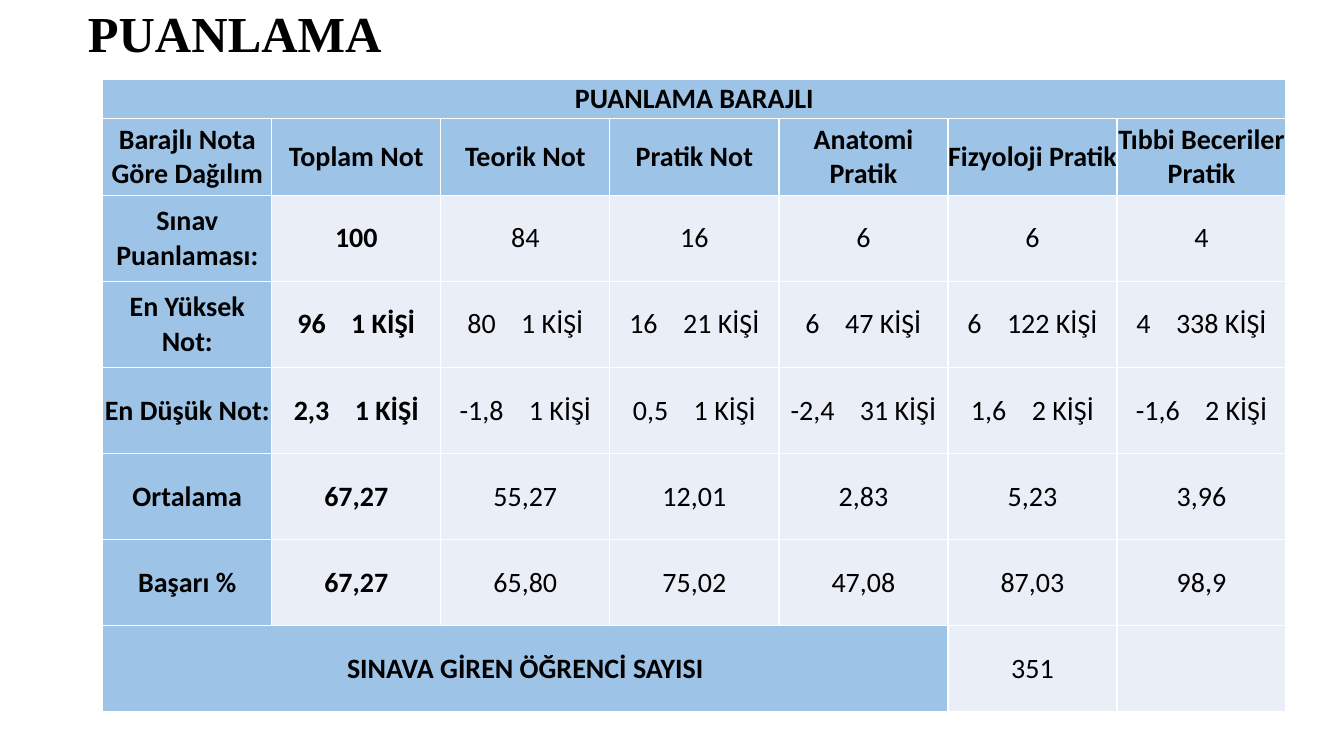
from dataclasses import dataclass

from lxml.etree import SubElement
from pptx import Presentation
from pptx.dml.color import RGBColor as RGB
from pptx.enum.text import MSO_ANCHOR as Anchor, MSO_AUTO_SIZE as AutoSize, PP_ALIGN as Align
from pptx.oxml.ns import qn
from pptx.util import Cm, Pt

# Content: a tuple is a score and the number of people who got it
TITLE = "PUANLAMA"
BANNER = "PUANLAMA BARAJLI"
HEADINGS = ["Barajlı Nota Göre Dağılım", "Toplam Not", "Teorik Not", "Pratik Not",
            "Anatomi Pratik", "Fizyoloji Pratik", "Tıbbi Beceriler Pratik"]
SCORES = [
    ["Sınav Puanlaması:", "100", "84", "16", "6", "6", "4"],
    ["En Yüksek Not:", ("96", "1 KİŞİ"), ("80", "1 KİŞİ"), ("16", "21 KİŞİ"),
     ("6", "47 KİŞİ"), ("6", "122 KİŞİ"), ("4", "338 KİŞİ")],
    ["En Düşük Not:", ("2,3", "1 KİŞİ"), ("-1,8", "1 KİŞİ"), ("0,5", "1 KİŞİ"),
     ("-2,4", "31 KİŞİ"), ("1,6", "2 KİŞİ"), ("-1,6", "2 KİŞİ")],
    ["Ortalama", "67,27", "55,27", "12,01", "2,83", "5,23", "3,96"],
    ["Başarı %", "67,27", "65,80", "75,02", "47,08", "87,03", "98,9"],
]
STUDENTS_LABEL, STUDENTS = "SINAVA GİREN ÖĞRENCİ SAYISI", "351"
STUDENTS_SPAN = 5


@dataclass(frozen=True)
class Theme:
    text: str = "000000"
    header: str = "9DC3E6"
    body: str = "EAEFF7"
    border: str = "FFFFFF"
    title_font: str = "Times New Roman"
    table_font: str = "Calibri"
    title_size: int = 36
    table_size: int = 20
    border_width: int = 1
    score_gap: float = 13.6  # points added to the space after a score


THEME = Theme()

# Layout in centimetres
TABLE_LEFT, TABLE_TOP, COLUMN_WIDTH = 2.59, 2.01, 4.26
BANNER_HEIGHT, HEADING_HEIGHT, SCORE_HEIGHT = 0.97, 1.94, 2.17


def write(frame, text, font=THEME.table_font, size=THEME.table_size, bold=False,
          align=Align.CENTER, line_spacing=None):
    """Write a string, or a pair of strings set apart by a wide space."""
    pieces = [text] if isinstance(text, str) else [text[0], " ", text[1]]
    paragraph = frame.paragraphs[0]
    paragraph.alignment = align
    paragraph.line_spacing = line_spacing
    for piece in pieces:
        run = paragraph.add_run()
        run.text = piece
        run.font.name, run.font.size, run.font.bold = font, Pt(size), bold
        run.font.color.rgb = RGB.from_string(THEME.text)
        if piece == " ":
            run.font._element.set("spc", str(round(THEME.score_gap * 100)))


def style_cell(cell, fill):
    cell.vertical_anchor = Anchor.MIDDLE
    cell.margin_left = cell.margin_right = cell.margin_top = cell.margin_bottom = 0
    properties = cell._tc.get_or_add_tcPr()
    for side in ("a:lnL", "a:lnR", "a:lnT", "a:lnB"):
        line = SubElement(properties, qn(side), w=str(Pt(THEME.border_width)))
        SubElement(SubElement(line, qn("a:solidFill")), qn("a:srgbClr"), val=THEME.border)
    cell.fill.solid()
    cell.fill.fore_color.rgb = RGB.from_string(fill)


def add_title(slide):
    title = slide.shapes.title
    title.left, title.top, title.width, title.height = Cm(1.96), Cm(0.23), Cm(29.21), Cm(1.35)
    frame = title.text_frame
    frame.auto_size = AutoSize.NONE
    frame.vertical_anchor = Anchor.MIDDLE
    write(frame, TITLE, font=THEME.title_font, size=THEME.title_size, bold=True,
          align=Align.LEFT, line_spacing=0.9)


def add_score_table(slide):
    columns = len(HEADINGS)

    def padded(*texts):
        return list(texts) + [""] * (columns - len(texts))

    students_row = padded(STUDENTS_LABEL, *[""] * (STUDENTS_SPAN - 1), STUDENTS)
    rows = [padded(BANNER), HEADINGS, *SCORES, students_row]
    heights = [BANNER_HEIGHT, HEADING_HEIGHT] + [SCORE_HEIGHT] * (len(rows) - 2)
    last = len(rows) - 1

    table = slide.shapes.add_table(len(rows), columns, Cm(TABLE_LEFT), Cm(TABLE_TOP),
                                   Cm(COLUMN_WIDTH * columns), Cm(sum(heights))).table
    for column in table.columns:
        column.width = Cm(COLUMN_WIDTH)
    for row, height in zip(table.rows, heights):
        row.height = Cm(height)

    # Cells: headings and row labels are blue, totals are bold
    for r, texts in enumerate(rows):
        for c, text in enumerate(texts):
            cell = table.cell(r, c)
            label = r < 2 or c == 0 or (r == last and c < STUDENTS_SPAN)
            style_cell(cell, THEME.header if label else THEME.body)
            if text:
                write(cell.text_frame, text, bold=label or c == 1)

    # Merged banner and student count label
    table.cell(0, 0).merge(table.cell(0, columns - 1))
    table.cell(last, 0).merge(table.cell(last, STUDENTS_SPAN - 1))


def main():
    deck = Presentation()
    deck.slide_width, deck.slide_height = Cm(33.87), Cm(19.05)
    slide = deck.slides.add_slide(deck.slide_layouts[5])
    add_title(slide)
    add_score_table(slide)
    deck.save("out.pptx")


if __name__ == "__main__":
    main()
